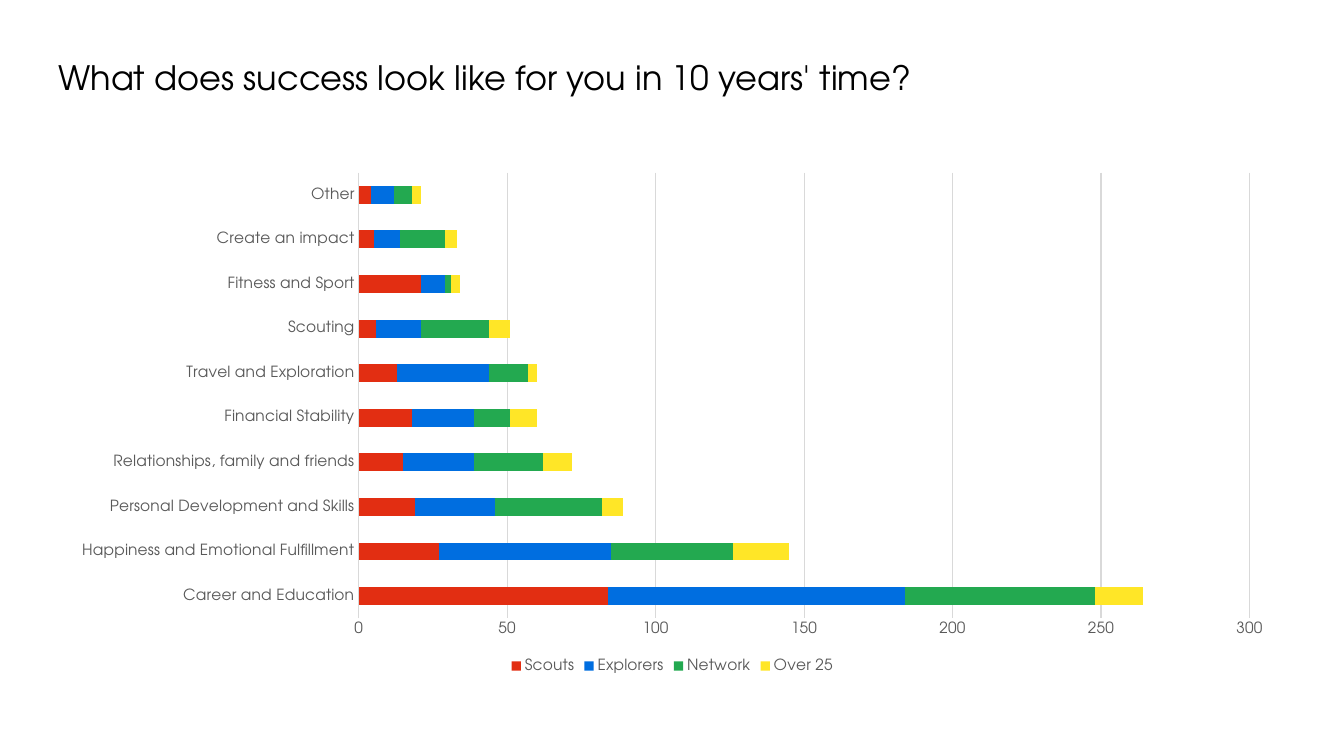
import pptx
import pptx.chart.data
import pptx.dml.color
import pptx.enum.chart
import pptx.enum.text
import pptx.util

Cm = pptx.util.Cm
Pt = pptx.util.Pt
RGBColor = pptx.dml.color.RGBColor

FONT = "TeX Gyre Adventor"
BLACK = RGBColor(0x00, 0x00, 0x00)
LABEL_GREY = RGBColor(0x59, 0x59, 0x59)
GRID_GREY = RGBColor(0xD9, 0xD9, 0xD9)
RED = RGBColor(0xE2, 0x2E, 0x12)
BLUE = RGBColor(0x00, 0x6E, 0xE0)
GREEN = RGBColor(0x23, 0xA9, 0x50)
YELLOW = RGBColor(0xFF, 0xE6, 0x27)

ANSWERS = [
    "Career and Education",
    "Happiness and Emotional Fulfillment",
    "Personal Development and Skills",
    "Relationships, family and friends",
    "Financial Stability",
    "Travel and Exploration",
    "Scouting",
    "Fitness and Sport",
    "Create an impact",
    "Other",
]
AGE_GROUPS = [
    ("Scouts", RED, [84, 27, 19, 15, 18, 13, 6, 21, 5, 4]),
    ("Explorers", BLUE, [100, 58, 27, 24, 21, 31, 15, 8, 9, 8]),
    ("Network", GREEN, [64, 41, 36, 23, 12, 13, 23, 2, 15, 6]),
    ("Over 25", YELLOW, [16, 19, 7, 10, 9, 3, 7, 3, 4, 3]),
]


def style_font(font, size, color):
    for key, value in {"name": FONT, "size": Pt(size), "bold": False}.items():
        setattr(font, key, value)
    font.color.rgb = color


def style_line(line, color):
    line.color.rgb = color
    line.width = Pt(0.75)


deck = pptx.Presentation()
deck.slide_width, deck.slide_height = Cm(33.87), Cm(19.05)
slide = deck.slides.add_slide(deck.slide_layouts[6])

# Question
question = slide.shapes.add_textbox(Cm(1.22), Cm(1.3), Cm(24.23), Cm(1.28)).text_frame
question.word_wrap = True
question.auto_size = pptx.enum.text.MSO_AUTO_SIZE.SHAPE_TO_FIT_TEXT
question.text = "What does success look like for you in 10 years' time?"
style_font(question.paragraphs[0].runs[0].font, 24, BLACK)

# Responses by age group
responses = pptx.chart.data.CategoryChartData(number_format="0")
responses.categories = ANSWERS
for group, color, counts in AGE_GROUPS:
    responses.add_series(group, counts)
chart = slide.shapes.add_chart(
    pptx.enum.chart.XL_CHART_TYPE.BAR_STACKED,
    Cm(1.45), Cm(4.09), Cm(30.99), Cm(12.98), responses,
).chart
chart.has_title = False
style_font(chart.font, 11, BLACK)

# Bars
bars = chart.plots[0]
for key, value in {"gap_width": 150, "overlap": 100, "vary_by_categories": False}.items():
    setattr(bars, key, value)
for series, (group, color, counts) in zip(bars.series, AGE_GROUPS):
    series.format.fill.solid()
    series.format.fill.fore_color.rgb = color
    series.invert_if_negative = False

# Axes
answer_axis, count_axis = chart.category_axis, chart.value_axis
for axis in (answer_axis, count_axis):
    axis.major_tick_mark = pptx.enum.chart.XL_TICK_MARK.NONE
    axis.minor_tick_mark = pptx.enum.chart.XL_TICK_MARK.NONE
    style_font(axis.tick_labels.font, 11, LABEL_GREY)
answer_axis.has_major_gridlines = False
style_line(answer_axis.format.line, GRID_GREY)
count_axis_scale = {"minimum_scale": 0, "maximum_scale": 300, "major_unit": 50,
                    "has_major_gridlines": True}
for key, value in count_axis_scale.items():
    setattr(count_axis, key, value)
style_line(count_axis.major_gridlines.format.line, GRID_GREY)
count_axis.format.line.fill.background()
count_axis.tick_labels.number_format = "0"
count_axis.tick_labels.number_format_is_linked = False

# Legend
chart.has_legend = True
chart.legend.position = pptx.enum.chart.XL_LEGEND_POSITION.BOTTOM
chart.legend.include_in_layout = False
style_font(chart.legend.font, 11, LABEL_GREY)

deck.save("out.pptx")
